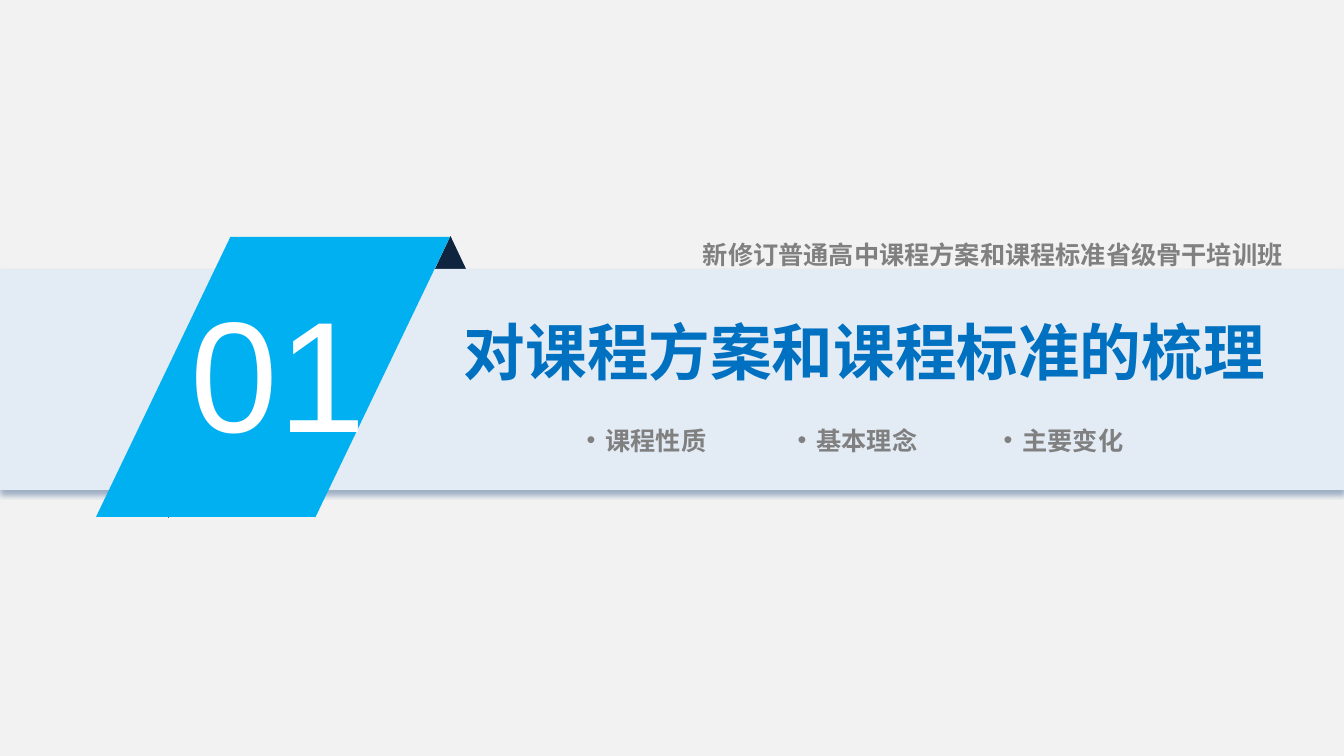
"""Build a section divider slide: numbered ribbon, title band and three topics."""
from lxml import etree
from pptx import Presentation
from pptx import util as u
from pptx.dml.color import RGBColor
from pptx.enum import shapes, text
from pptx.oxml import parse_xml
from pptx.oxml.ns import qn

SCALE = 914400 / 100.8
CJK = "Noto Sans CJK SC"
GREY = "808080"
NAVY = "0F243E"
KINDS = shapes.MSO_SHAPE

presentation = Presentation()
presentation.slide_width = round(1344 * SCALE)
presentation.slide_height = round(756 * SCALE)
slide = presentation.slides.add_slide(presentation.slide_layouts[6])
slide.background.fill.solid()
slide.background.fill.fore_color.rgb = RGBColor.from_string("F2F2F2")


def add_block(kind, box, color):
    shape = slide.shapes.add_shape(kind, *[round(n * SCALE) for n in box])
    shape.shadow.inherit = False
    shape.fill.solid()
    shape.fill.fore_color.rgb = RGBColor.from_string(color)
    shape.line.fill.background()
    return shape


def add_text(content, box, size, color, font=CJK, bold=True, align="LEFT",
             inset=(0, 0), wrap=True, spacing=None, bullet=False):
    shape = slide.shapes.add_textbox(*[round(n * SCALE) for n in box])
    frame = shape.text_frame
    frame.word_wrap = wrap
    frame.margin_left = frame.margin_right = round(inset[0] * SCALE)
    frame.margin_top = frame.margin_bottom = round(inset[1] * SCALE)
    paragraph = frame.paragraphs[0]
    paragraph.alignment = getattr(text.PP_ALIGN, align)
    if spacing:
        paragraph.line_spacing = spacing
    run = paragraph.add_run()
    run.text = content
    run.font.name = font
    run.font.size = u.Pt(size)
    run.font.bold = bold
    run.font.color.rgb = RGBColor.from_string(color)
    etree.SubElement(run.font._element, qn("a:ea"), typeface=font)
    if bullet:
        properties = paragraph._p.get_or_add_pPr()
        indent = round(19 * SCALE)
        properties.set("marL", str(indent))
        properties.set("indent", str(-indent))
        etree.SubElement(properties, qn("a:buFont"), typeface="Arial")
        etree.SubElement(properties, qn("a:buChar"), char="•")


add_block(KINDS.ISOSCELES_TRIANGLE, (390, 236, 121, 128), NAVY)
lower_fold = add_block(KINDS.ISOSCELES_TRIANGLE, (108, 390, 121, 128), NAVY)
lower_fold._element.spPr.find(qn("a:xfrm")).set("flipV", "1")

band = add_block(KINDS.RECTANGLE, (0, 269, 1344, 221), "E3EBF5")
effects = band._element.spPr.find(qn("a:effectLst"))
effects.append(parse_xml(
    '<a:outerShdw xmlns:a="http://schemas.openxmlformats.org/drawingml/2006/main"'
    f' blurRad="{u.Pt(4)}" dist="{u.Pt(3)}" dir="5400000" algn="t" rotWithShape="0">'
    '<a:srgbClr val="1F497D"><a:alpha val="40000"/></a:srgbClr></a:outerShdw>'))

ribbon = add_block(KINDS.PARALLELOGRAM, (96, 237, 354, 280), "00B0F0")
ribbon.adjustments[0] = 0.48

add_text("01", (181, 275, 195, 191), 112.5, "FFFFFF", font="Arial", bold=False,
         align="CENTER")
add_text("对课程方案和课程标准的梳理", (464, 314, 806, 75), 44, "0070C0")

for topic, left in (("课程性质", 510), ("基本理念", 721), ("主要变化", 927)):
    add_text(topic, (left, 420, 273, 40), 18, GREY, align="CENTER",
             inset=(10, 5), bullet=True)

add_text("新修订普通高中课程方案和课程标准省级骨干培训班", (693, 213, 606, 55), 18, GREY,
         inset=(10, 5), wrap=False, spacing=1.7)

presentation.save("out.pptx")
